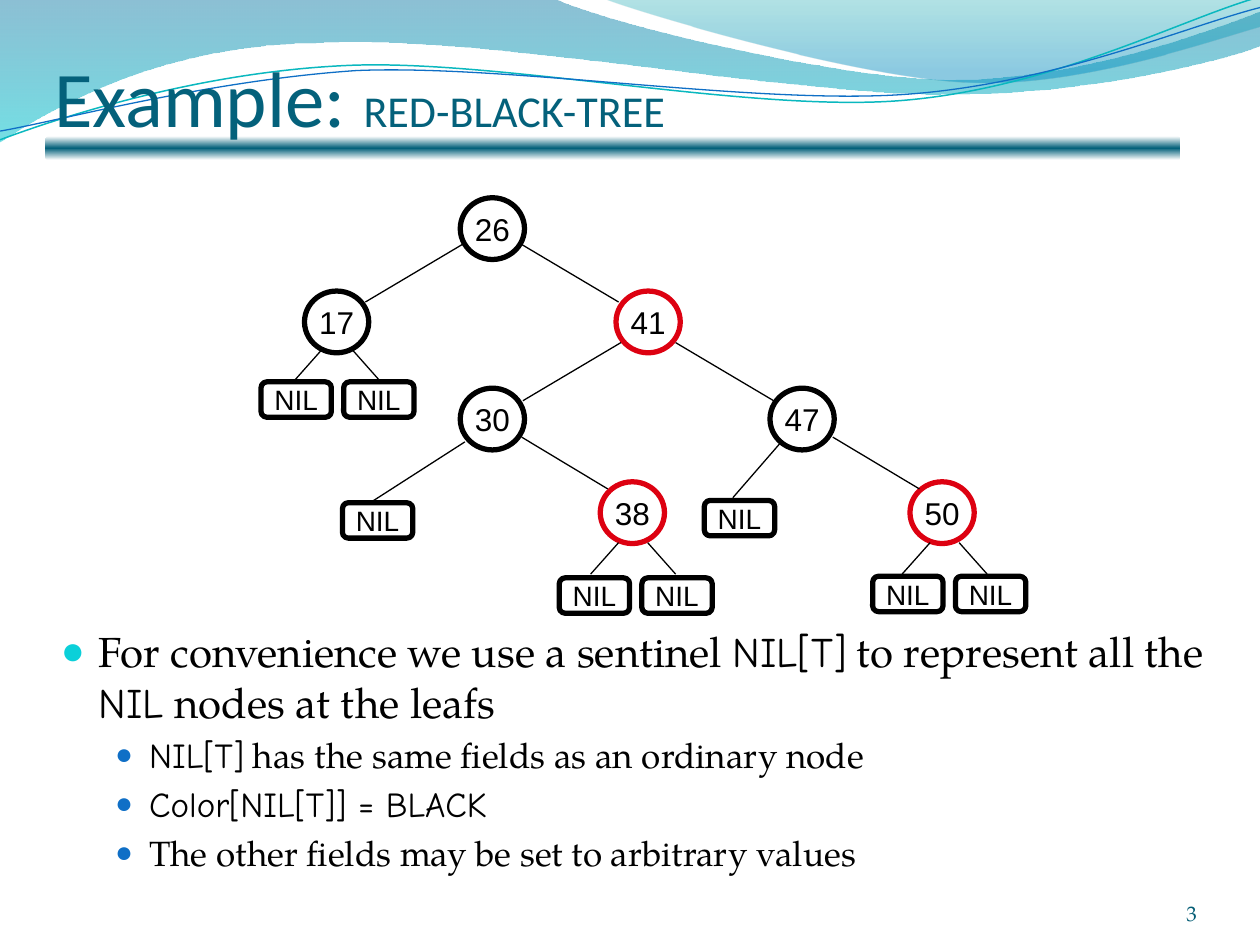
from lxml import etree
from pptx import Presentation
from pptx import util as u
from pptx.dml.color import RGBColor
from pptx.enum import shapes, text
from pptx.oxml import ns

BLACK = RGBColor(0x00, 0x00, 0x00)
WHITE = RGBColor(0xFF, 0xFF, 0xFF)
RED = RGBColor(0xDD, 0x01, 0x11)
TEAL = RGBColor(0x04, 0x61, 0x7B)
DARK_TEAL = RGBColor(0x04, 0x5D, 0x75)
CYAN = RGBColor(0x0B, 0xD0, 0xD9)
BLUE = RGBColor(0x0F, 0x6F, 0xC6)
CURVE_CYAN = RGBColor(0x0A, 0xB8, 0xBF)
WAVE_BLUE = RGBColor(0x00, 0x74, 0xA1)
WAVE_CYAN = RGBColor(0x00, 0xC6, 0xCF)
CREST_GREEN = RGBColor(0x00, 0xA1, 0xA9)
CREST_BLUE = RGBColor(0x00, 0x8B, 0xBF)

SERIF, CODE = "TeX Gyre Pagella", "Comic Neue"

# Outlines: a pair is a straight step, six numbers are a Bezier step.
WAVE = [(0, -0.7), (316.8, -0.7), (342.7, 12.2, 478.1, 45.4, 545.8, 45.4),
        (614.2, 45.4, 689.8, 18.7, 720, 6.5), (720.7, 25.9),
        (707.8, 31.7, 626.4, 54.7, 537.1, 54), (447.8, 54, 275, 20.2, 185, 24.5),
        (92.9, 25.2, 33.1, 59.8, -0.7, 81.4)]
CREST = [(344.9, -0.7), (366.5, 7.9, 491, 44.6, 553.7, 46.8),
         (616.3, 49.7, 691.9, 23, 720, 15.1), (720, 0)]
UPPER_CURVE = [(0, 79.9), (34.6, 67, 113.8, 41, 199.4, 37.4),
               (284.4, 33.8, 427, 64.1, 513.4, 57.6),
               (599.8, 51.1, 675.4, 10.8, 718.6, -1.4)]
LOWER_CURVE = [(0, 74.9), (33.8, 69.1, 118.1, 46.1, 203.8, 40.3),
               (290.2, 36.7, 429.8, 59.8, 516.2, 54),
               (601.9, 48.2, 677.5, 15.1, 720, 4.3)]

NODES = [("26", 263, 113, BLACK), ("17", 174, 166.3, BLACK), ("41", 352, 166.3, RED),
         ("30", 263, 221.8, BLACK), ("47", 440, 221.8, BLACK),
         ("38", 343, 275.3, RED), ("50", 520, 275.3, RED)]
LEAVES = [(149.2, 218.2), (196.4, 218.2), (195.7, 287.3), (319.6, 330.2), (366.8, 330.2),
          (498.7, 329.3), (546, 329.3), (402.5, 286)]
BRANCHES = [(264.2, 139.7, 208.8, 172.6), (298.1, 139.7, 353.5, 172.6),
            (354.8, 195.8, 298.8, 229), (386.1, 195.8, 442.1, 229),
            (298.1, 249.8, 347.3, 279.4), (475.9, 249.8, 525.4, 279.4),
            (265.7, 252.5, 211.5, 287.3), (445.7, 253.4, 418.8, 284.4)]
# Points midway between the two lines that lead to a pair of leaves.
LEAF_FORKS = [(192.6, 199.4), (361.8, 310.1), (539.8, 310.1)]

BULLETS = [
    (0, [("For convenience we use a sentinel ", SERIF), ("NIL[T]", CODE),
         (" to represent all the ", SERIF), ("NIL", CODE), (" nodes at the leafs", SERIF)]),
    (1, [("NIL[T]", CODE), (" has the same fields as an ordinary node", SERIF)]),
    (1, [("Color[NIL[T]] = BLACK", CODE)]),
    (1, [("The other fields may be set to arbitrary values", SERIF)]),
]
# Per level: font size, left margin, hanging indent, bullet colour, bullet percent
LEVELS = [(24, 21.6, 21.6, CYAN, 95), (20, 50.4, 19.4, BLUE, 85)]


def add_xml(parent, tag, **attributes):
    return etree.SubElement(parent, ns.qn(tag), {k: str(v) for k, v in attributes.items()})


def fill_gradient(shape, stops):
    """Fill from top to bottom with (position, colour, opacity) stops in percent."""
    shape.fill.gradient()
    shape.fill.gradient_angle = 270
    stop_list = shape.element.spPr.find(".//" + ns.qn("a:gsLst"))
    for old in list(stop_list):
        stop_list.remove(old)
    for position, color, opacity in stops:
        stop = add_xml(stop_list, "a:gs", pos=position * 1000)
        add_xml(add_xml(stop, "a:srgbClr", val=color), "a:alpha", val=opacity * 1000)
    shape.line.fill.background()


def bend(shape, steps):
    """Join the three straight segments of each Bezier step into one curve."""
    path = shape.element.spPr.find(".//" + ns.qn("a:path"))
    segments = iter(path.findall(ns.qn("a:lnTo")))
    for step in steps:
        first = next(segments)
        if len(step) == 6:
            first.tag = ns.qn("a:cubicBezTo")
            for segment in (next(segments), next(segments)):
                first.append(segment[0])
                path.remove(segment)


class Deck:
    def __init__(self):
        self.presentation = Presentation()
        self.presentation.slide_width, self.presentation.slide_height = u.Pt(720), u.Pt(540)
        self.slide = self.presentation.slides.add_slide(self.presentation.slide_layouts[1])

    def style(self, font, size, color, name=None):
        font.size, font.color.rgb = u.Pt(size), color
        if name:
            font.name = name

    def place(self, shape, left, top, width, height):
        shape.left, shape.top, shape.width, shape.height = map(u.Pt, (left, top, width, height))

    def outline(self, steps, closed):
        points = [(u.Pt(step[i]), u.Pt(step[i + 1]))
                  for step in steps for i in range(0, len(step), 2)]
        builder = self.slide.shapes.build_freeform(*points[0])
        builder.add_line_segments(points[1:], close=closed)
        shape = builder.convert_to_shape()
        bend(shape, steps[1:])
        shape.shadow.inherit = False
        return shape

    def wave(self, steps, stops):
        fill_gradient(self.outline(steps, True), stops)

    def curve(self, steps, color, width):
        shape = self.outline(steps, False)
        shape.fill.background()
        shape.line.color.rgb, shape.line.width = color, u.Pt(width)

    def preset(self, kind, left, top, width, height):
        shape = self.slide.shapes.add_shape(kind, *map(u.Pt, (left, top, width, height)))
        shape.shadow.inherit = False
        return shape

    def rule(self, *box):
        bar = self.preset(shapes.MSO_SHAPE.ROUNDED_RECTANGLE, *box)
        fill_gradient(bar, [(0, WHITE, 100), (50, TEAL, 100), (100, WHITE, 100)])

    def node(self, kind, label, box, color, size):
        shape = self.preset(kind, *box)
        shape.fill.background()
        shape.line.color.rgb, shape.line.width = color, u.Pt(3)
        frame = shape.text_frame
        frame.word_wrap = False
        frame.vertical_anchor = text.MSO_ANCHOR.MIDDLE
        paragraph = frame.paragraphs[0]
        paragraph.text, paragraph.alignment = label, text.PP_ALIGN.CENTER
        self.style(paragraph.font, size, BLACK, "Arial")

    def branch(self, *ends):
        line = self.slide.shapes.add_connector(shapes.MSO_CONNECTOR.STRAIGHT, *map(u.Pt, ends))
        line.line.color.rgb, line.line.width = BLACK, u.Pt(0.75)
        add_xml(line.element.spPr, "a:effectLst")

    def bring_to_front(self, shape):
        shape.element.getparent().append(shape.element)

    def title(self, parts, *box):
        title = self.slide.shapes.title
        self.bring_to_front(title)
        self.place(title, *box)
        frame = title.text_frame
        frame.auto_size, frame.vertical_anchor = text.MSO_AUTO_SIZE.NONE, text.MSO_ANCHOR.BOTTOM
        frame.margin_left = frame.margin_right = frame.margin_bottom = 0
        paragraph = frame.paragraphs[0]
        paragraph.alignment = text.PP_ALIGN.LEFT
        for words, size in parts:
            run = paragraph.add_run()
            run.text = words
            self.style(run.font, size, TEAL, "Calibri")

    def bullets(self, items, *box):
        body = self.slide.placeholders[1]
        self.bring_to_front(body)
        self.place(body, *box)
        frame = body.text_frame
        frame.auto_size = text.MSO_AUTO_SIZE.NONE
        for index, (level, parts) in enumerate(items):
            paragraph = frame.add_paragraph() if index else frame.paragraphs[0]
            paragraph.level = level
            size, margin, hanging, color, percent = LEVELS[level]
            properties = paragraph._p.get_or_add_pPr()
            properties.set("marL", str(u.Pt(margin)))
            properties.set("indent", str(-u.Pt(hanging)))
            add_xml(add_xml(properties, "a:buClr"), "a:srgbClr", val=color)
            add_xml(properties, "a:buSzPct", val=percent * 1000)
            add_xml(properties, "a:buChar", char="●")
            self.style(paragraph.font, size, BLACK)
            for words, name in parts:
                run = paragraph.add_run()
                run.text = words
                self.style(run.font, size, BLACK, name)

    def page_number(self, number, *box):
        frame = self.slide.shapes.add_textbox(*map(u.Pt, box)).text_frame
        frame.word_wrap, frame.vertical_anchor = True, text.MSO_ANCHOR.BOTTOM
        frame.margin_left = frame.margin_right = frame.margin_top = frame.margin_bottom = 0
        paragraph = frame.paragraphs[0]
        paragraph.text, paragraph.alignment = number, text.PP_ALIGN.RIGHT
        self.style(paragraph.font, 12, DARK_TEAL, SERIF)


def main():
    deck = Deck()
    deck.wave(WAVE, [(0, WAVE_BLUE, 45), (100, WAVE_CYAN, 55)])
    deck.wave(CREST, [(0, CREST_GREEN, 30), (80, CREST_BLUE, 45)])
    deck.curve(UPPER_CURVE, CURVE_CYAN, 0.85)
    deck.curve(LOWER_CURVE, BLUE, 0.75)
    deck.rule(25.9, 77.8, 648.7, 13.7)
    deck.title([("Example: ", 45), ("RED-BLACK-TREE", 25.2)], 31, 30.2, 648, 51.8)
    deck.bullets(BULLETS, 27.6, 354, 672.5, 170)
    deck.page_number("3", 624.2, 500.4, 59.8, 28.8)

    for label, left, top, color in NODES:
        deck.node(shapes.MSO_SHAPE.OVAL, label, (left, top, 36.7, 35.3), color, 18)
    for left, top in LEAVES:
        deck.node(shapes.MSO_SHAPE.ROUNDED_RECTANGLE, "NIL", (left, top, 40.2, 20.2), BLACK, 16)
    for ends in BRANCHES:
        deck.branch(*ends)
    for x, y in LEAF_FORKS:
        for side in (-1, 1):
            deck.branch(x + side * 8.3, y, x + side * 24.3, y + 18)
    deck.presentation.save("out.pptx")


if __name__ == "__main__":
    main()
